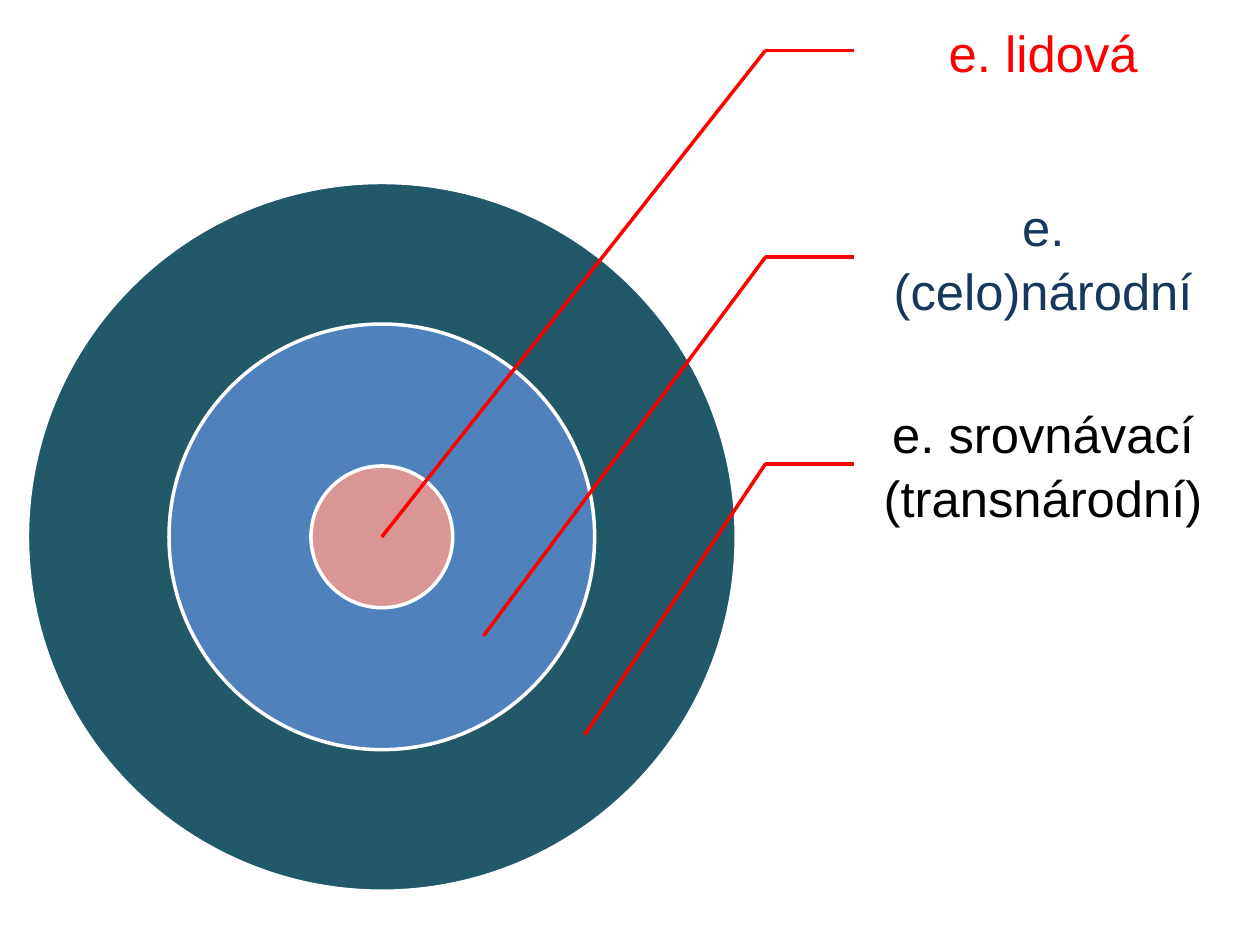
from dataclasses import dataclass

from lxml import etree
from pptx import Presentation
from pptx.dml.color import RGBColor
from pptx.enum.shapes import MSO_CONNECTOR, MSO_SHAPE
from pptx.enum.text import MSO_ANCHOR, PP_ALIGN
from pptx.oxml.ns import qn
from pptx.util import Pt

ELLIPSE = MSO_SHAPE.OVAL
STRAIGHT = MSO_CONNECTOR.STRAIGHT
MIDDLE = MSO_ANCHOR.MIDDLE
CENTER = PP_ALIGN.CENTER


@dataclass(frozen=True)
class Theme:
    font: str = "Arial"
    label_size: float = 29
    line_spacing: float = 1.05
    line_width: float = 2
    outline: str = "FFFFFF"
    leader: str = "FF0000"


@dataclass(frozen=True)
class Ring:
    """One circle with its label and the point its leader line meets."""
    diameter: float
    fill: str
    lines: tuple[str, ...]
    text_color: str
    target: tuple[float, float]


THEME = Theme()

# Lengths in points
CENTER_X, CENTER_Y = 218.2, 306.8
ELBOW_X = 437.4
LABEL_X, LABEL_TOP = 488.2, -30.2
LABEL_W, LABEL_H = 202.3, 118.1

# From the innermost circle to the outermost, labels top to bottom
RINGS = (
    Ring(81, "D99694", ("e. lidová",), "FF0000", (CENTER_X, CENTER_Y)),
    Ring(243.2, "4F81BD", ("e. (celo)národní",), "17375E", (276.3, 363.4)),
    Ring(405, "215968", ("e. srovnávací", "(transnárodní)"), "000000",
         (334.2, 419.9)),
)


def rgb(color: str) -> RGBColor:
    return RGBColor.from_string(color)


def add_circle(slide, ring: Ring) -> None:
    d = ring.diameter
    s = slide.shapes.add_shape(ELLIPSE, Pt(CENTER_X - d / 2),
                               Pt(CENTER_Y - d / 2), Pt(d), Pt(d))
    s.shadow.inherit = False
    s.fill.solid()
    s.fill.fore_color.rgb = rgb(ring.fill)
    s.line.color.rgb = rgb(THEME.outline)
    s.line.width = Pt(THEME.line_width)


def add_line(slide, start: tuple[float, float],
             end: tuple[float, float]) -> None:
    s = slide.shapes.add_connector(STRAIGHT, *map(Pt, (*start, *end)))
    s.line.color.rgb = rgb(THEME.leader)
    s.line.width = Pt(THEME.line_width)
    etree.SubElement(s._element.spPr, qn("a:effectLst"))


def add_label(slide, ring: Ring, top: float) -> None:
    s = slide.shapes.add_textbox(Pt(LABEL_X), Pt(top),
                                 Pt(LABEL_W), Pt(LABEL_H))
    tf = s.text_frame
    tf.word_wrap = True
    tf.vertical_anchor = MIDDLE
    tf.margin_left = Pt(16.5)
    tf.margin_top = tf.margin_right = tf.margin_bottom = Pt(2.9)
    tf.text = "\n".join(ring.lines)
    for p in tf.paragraphs:
        p.alignment = CENTER
        p.line_spacing = THEME.line_spacing
        p.font.name = THEME.font
        p.font.size = Pt(THEME.label_size)
        p.font.color.rgb = rgb(ring.text_color)


def main() -> None:
    prs = Presentation()
    prs.slide_width, prs.slide_height = Pt(720), Pt(540)
    slide = prs.slides.add_slide(prs.slide_layouts[6])

    # Concentric circles, largest at the back
    for ring in reversed(RINGS):
        add_circle(slide, ring)

    # Labels with bent leader lines
    for i, ring in enumerate(RINGS):
        top = LABEL_TOP + i * LABEL_H
        middle = top + LABEL_H / 2
        add_label(slide, ring, top)
        add_line(slide, (ELBOW_X, middle), (LABEL_X, middle))
        add_line(slide, (ELBOW_X, middle), ring.target)

    prs.save("out.pptx")


if __name__ == "__main__":
    main()
